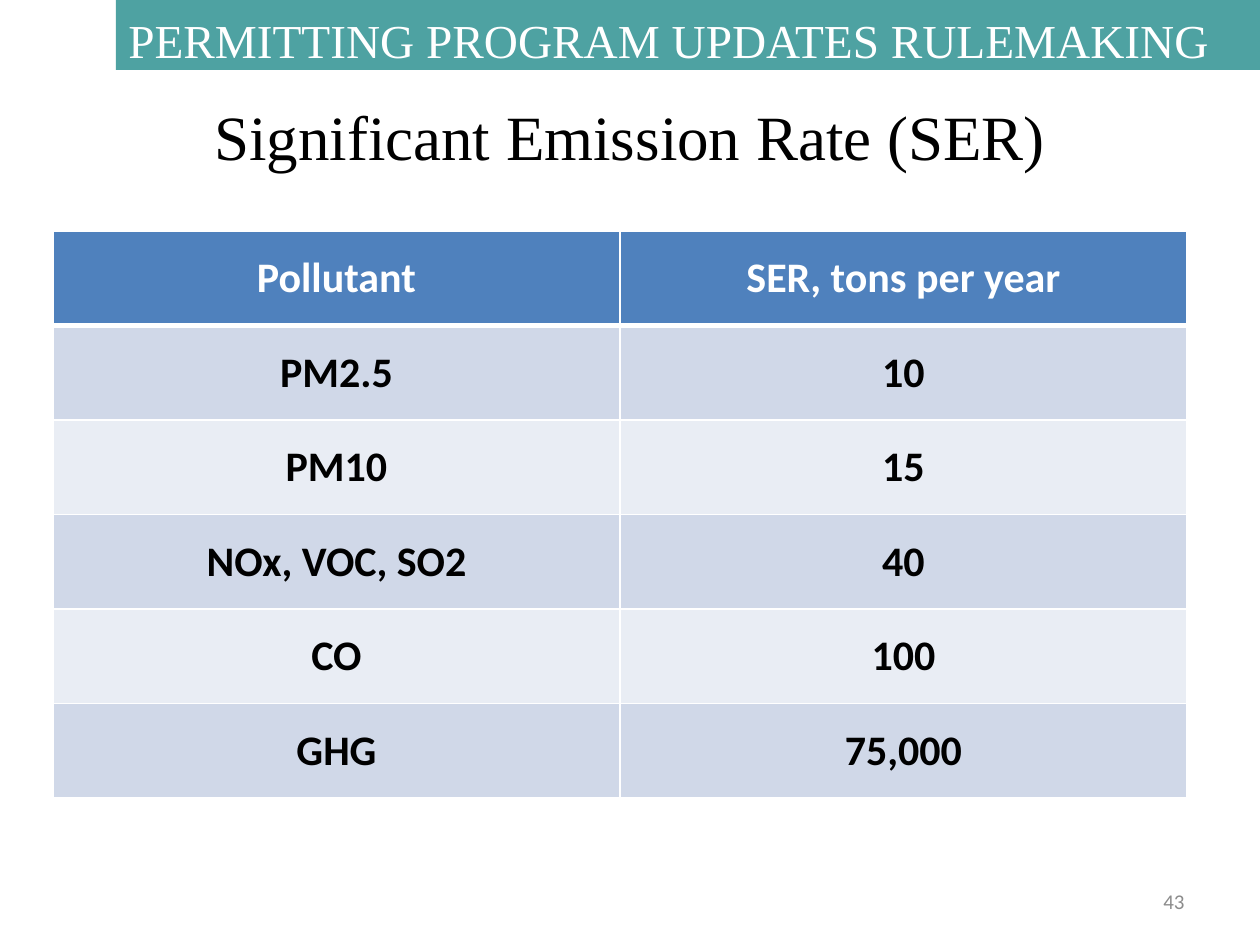
from dataclasses import dataclass
from lxml.etree import SubElement
from pptx import Presentation
from pptx.dml.color import RGBColor
from pptx.enum.shapes import MSO_SHAPE
from pptx.enum.text import MSO_ANCHOR, PP_ALIGN
from pptx.oxml.ns import qn
from pptx.util import Pt

BANNER = "PERMITTING PROGRAM UPDATES RULEMAKING"
TITLE = "Significant Emission Rate (SER)"
PAGE_NUMBER = "43"
EMISSION_RATES = [
    ("Pollutant", "SER, tons per year"),
    ("PM2.5", "10"),
    ("PM10", "15"),
    ("NOx, VOC, SO2", "40"),
    ("CO", "100"),
    ("GHG", "75,000"),
]

SLIDE_SIZE = (1260, 945)
BANNER_BOX = (116, 0, 1144, 70)
TITLE_BOX = (63, 84, 1134, 111)
TABLE_BOX = (53, 231, 1134, 567)
PAGE_NUMBER_BOX = (903, 876, 294, 50)


@dataclass(frozen=True)
class Theme:
    serif: str = "Times New Roman"
    sans: str = "Calibri"
    white: str = "FFFFFF"
    black: str = "000000"
    gray: str = "8C8C8C"
    banner: str = "4EA2A2"
    header: str = "4F81BD"
    bands: tuple = ("E9EDF4", "D0D8E8")
    banner_size: int = 27
    title_size: int = 36
    table_size: int = 24
    number_size: int = 12
    border: int = 1
    header_border: int = 3


THEME = Theme()


def px(value):
    return round(value * 914400 / 126)


def place(box):
    return [px(value) for value in box]


def set_attributes(target, values):
    for name, value in values.items():
        setattr(target, name, value)


def write(frame, text, font, size, color, align, bold=False):
    paragraph = frame.paragraphs[0]
    paragraph.text = text
    paragraph.alignment = align
    set_attributes(paragraph.font, {"name": font, "size": Pt(size), "bold": bold})
    paragraph.font.color.rgb = RGBColor.from_string(color)


def fill(target, color):
    target.fill.solid()
    target.fill.fore_color.rgb = RGBColor.from_string(color)


def add_border(cell, side, width):
    properties = cell._tc.get_or_add_tcPr()
    line = SubElement(properties, qn(f"a:ln{side}"), w=str(Pt(width)))
    SubElement(SubElement(line, qn("a:solidFill")), qn("a:srgbClr"), val=THEME.white)


def add_banner(slide):
    shape = slide.shapes.add_shape(MSO_SHAPE.RECTANGLE, *place(BANNER_BOX))
    shape.shadow.inherit = False
    shape.line.fill.background()
    fill(shape, THEME.banner)
    set_attributes(shape.text_frame, {
        "word_wrap": True, "vertical_anchor": MSO_ANCHOR.TOP,
        "margin_top": px(11), "margin_bottom": 0})
    write(shape.text_frame, BANNER, THEME.serif, THEME.banner_size,
          THEME.white, PP_ALIGN.LEFT)


def add_text(slide, box, anchor, margin_top, *text_format):
    frame = slide.shapes.add_textbox(*place(box)).text_frame
    set_attributes(frame, {"word_wrap": True, "vertical_anchor": anchor,
                           "margin_top": px(margin_top)})
    write(frame, *text_format)


def add_rates_table(slide):
    table = slide.shapes.add_table(
        len(EMISSION_RATES), len(EMISSION_RATES[0]), *place(TABLE_BOX)).table
    for row, values in enumerate(EMISSION_RATES):
        is_header = row == 0
        for column, value in enumerate(values):
            cell = table.cell(row, column)
            for side in "LRTB":
                below_header = (row, side) in ((0, "B"), (1, "T"))
                add_border(cell, side,
                           THEME.header_border if below_header else THEME.border)
            fill(cell, THEME.header if is_header else THEME.bands[row % 2])
            cell.vertical_anchor = MSO_ANCHOR.MIDDLE
            write(cell.text_frame, value, THEME.sans, THEME.table_size,
                  THEME.white if is_header else THEME.black,
                  PP_ALIGN.CENTER, bold=True)


def main():
    presentation = Presentation()
    width, height = place(SLIDE_SIZE)
    set_attributes(presentation, {"slide_width": width, "slide_height": height})
    slide = presentation.slides.add_slide(presentation.slide_layouts[6])
    add_banner(slide)
    add_text(slide, TITLE_BOX, MSO_ANCHOR.TOP, 14, TITLE, THEME.serif,
             THEME.title_size, THEME.black, PP_ALIGN.CENTER)
    add_rates_table(slide)
    add_text(slide, PAGE_NUMBER_BOX, MSO_ANCHOR.MIDDLE, 6, PAGE_NUMBER, THEME.sans,
             THEME.number_size, THEME.gray, PP_ALIGN.RIGHT)
    presentation.save("out.pptx")


if __name__ == "__main__":
    main()
